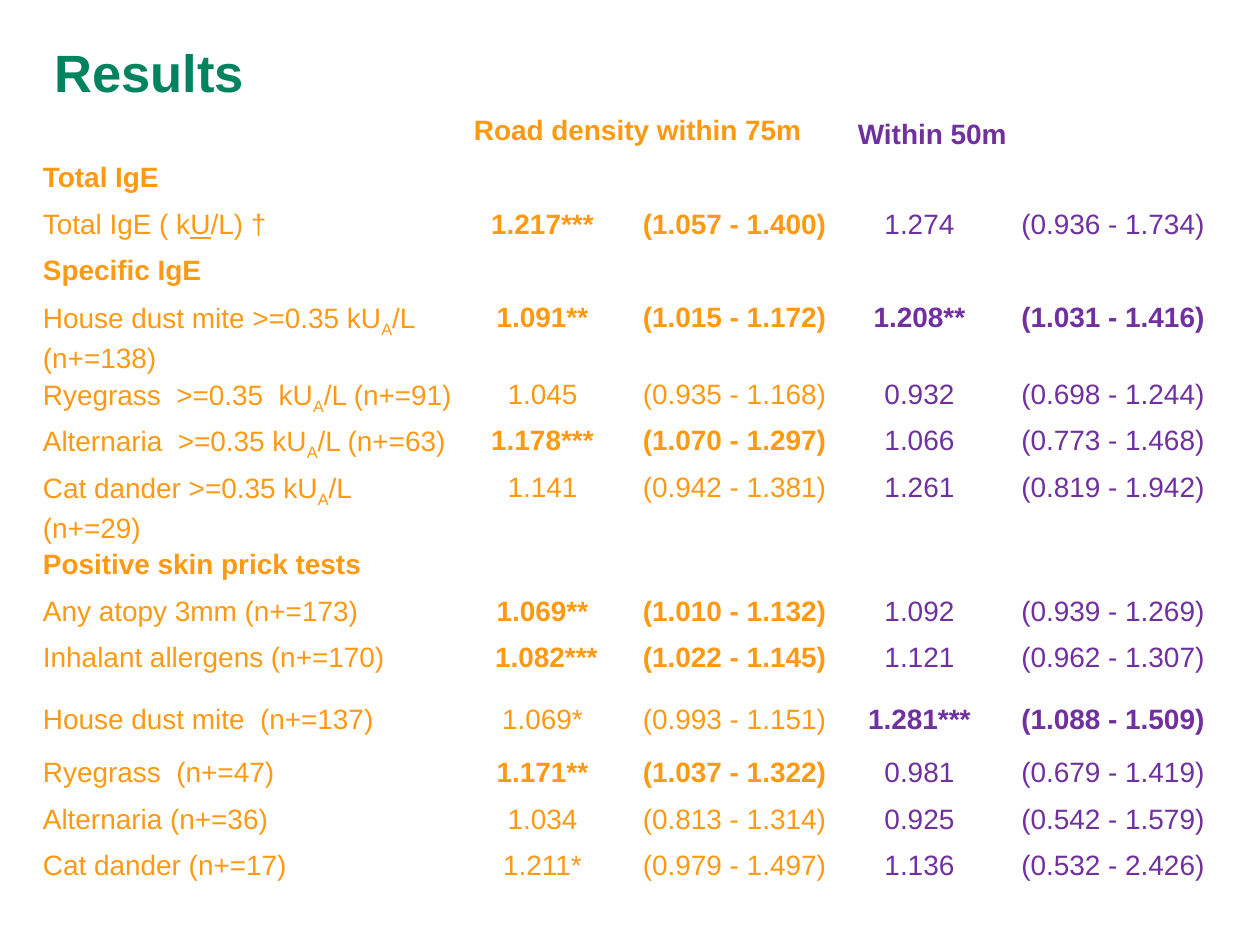
from dataclasses import dataclass
from typing import Any

import pptx
import pptx.dml.color
import pptx.enum.text
import pptx.util

SCALE = 914400 // 126
ALIGN = pptx.enum.text.PP_ALIGN


@dataclass(frozen=True)
class Theme:
    font: str = "Arial"
    title: str = "01835F"
    near: str = "FE9914"
    far: str = "7030A0"
    head_size: int = 30
    size: int = 16
    line: float = 1.15


@dataclass(frozen=True)
class Row:
    """One result line; underscores in the label fence a marked letter."""
    high: int
    label: str
    values: tuple[str, ...] = ()


THEME = Theme()
COLS = (431, 155, 229, 141, 246, 24)
HEAD = 43
ROWS = (
    Row(47, "Total IgE"),
    Row(46, "Total IgE ( k_U_/L) †",
        ("1.217***", "(1.057 - 1.400)", "1.274", "(0.936 - 1.734)")),
    Row(47, "Specific IgE"),
    Row(76, "House dust mite >=0.35 kU_A_/L (n+=138)",
        ("1.091**", "(1.015 - 1.172)", "1.208**", "(1.031 - 1.416)")),
    Row(46, "Ryegrass  >=0.35  kU_A_/L (n+=91)",
        ("1.045", "(0.935 - 1.168)", "0.932", "(0.698 - 1.244)")),
    Row(47, "Alternaria  >=0.35 kU_A_/L (n+=63)",
        ("1.178***", "(1.070 - 1.297)", "1.066", "(0.773 - 1.468)")),
    Row(74, "Cat dander >=0.35 kU_A_/L  (n+=29)",
        ("1.141", "(0.942 - 1.381)", "1.261", "(0.819 - 1.942)")),
    Row(47, "Positive skin prick tests"),
    Row(46, "Any atopy 3mm (n+=173)",
        ("1.069**", "(1.010 - 1.132)", "1.092", "(0.939 - 1.269)")),
    Row(62, "Inhalant allergens (n+=170)",
        (" 1.082***", "(1.022 - 1.145)", "1.121", "(0.962 - 1.307)")),
    Row(53, "House dust mite  (n+=137)",
        ("1.069*", "(0.993 - 1.151)", "1.281***", "(1.088 - 1.509)")),
    Row(47, "Ryegrass  (n+=47)",
        ("1.171**", "(1.037 - 1.322)", "0.981", "(0.679 - 1.419)")),
    Row(46, "Alternaria (n+=36)",
        ("1.034", "(0.813 - 1.314)", "0.925", "(0.542 - 1.579)")),
    Row(47, "Cat dander (n+=17)",
        ("1.211*", "(0.979 - 1.497)", "1.136", "(0.532 - 2.426)")),
)


def px(count: int) -> pptx.util.Emu:
    return pptx.util.Emu(count * SCALE)


def style(font: Any, size: int, color: str, bold: bool) -> None:
    font.name = THEME.font
    font.size = pptx.util.Pt(size)
    font.bold = bold
    font.color.rgb = pptx.dml.color.RGBColor.from_string(color)


def write(cell: Any, text: str, color: str, bold: bool,
          align: ALIGN = ALIGN.LEFT, line: float = THEME.line) -> None:
    """Fill a cell, underlining a fenced U and lowering a fenced A."""
    para = cell.text_frame.paragraphs[0]
    para.alignment = align
    para.line_spacing = line
    style(para.font, THEME.size, color, bold)
    for spot, part in enumerate(text.split("_")):
        run = para.add_run()
        run.text = part
        if spot % 2 and part == "U":
            run.font.underline = True
        elif spot % 2:
            run.font._element.set("baseline", "-25000")


def add_title(slide: Any) -> None:
    title = slide.shapes.title
    title.left, title.top = px(42), px(-4)
    title.width, title.height = px(1134), px(151)
    frame = title.text_frame
    frame.text = "Results"
    frame.vertical_anchor = pptx.enum.text.MSO_ANCHOR.MIDDLE
    para = frame.paragraphs[0]
    para.alignment = ALIGN.LEFT
    style(para.font, THEME.head_size, THEME.title, True)


def fill_row(grid: Any, index: int, row: Row) -> None:
    write(grid.cell(index, 0), row.label, THEME.near, not row.values)
    for col, value in enumerate(row.values, 1):
        ratio = row.values[(col - 1) // 2 * 2]
        color = THEME.near if col < 3 else THEME.far
        write(grid.cell(index, col), value, color, "**" in ratio, ALIGN.CENTER)


def add_grid(slide: Any) -> None:
    highs = [HEAD] + [row.high for row in ROWS]
    grid = slide.shapes.add_table(
        len(highs), len(COLS), px(34), px(115), px(sum(COLS)), px(sum(highs))
    ).table
    grid.first_row = grid.horz_banding = False
    for col, wide in zip(grid.columns, COLS):
        col.width = px(wide)
    for line, high in zip(grid.rows, highs):
        line.height = px(high)
    for cell in grid.iter_cells():
        cell.fill.background()
        cell.margin_left = cell.margin_right = px(9)
        cell.margin_top = cell.margin_bottom = 0

    tests = 1 + [row.label for row in ROWS].index("Positive skin prick tests")
    for line, first, last in ((0, 1, 2), (0, 3, 5), (tests, 0, 1), (tests, 3, 5)):
        grid.cell(line, first).merge(grid.cell(line, last))
    write(grid.cell(0, 1), "Road density within 75m", THEME.near, True, line=1.0)
    write(grid.cell(0, 3), "Within 50m", THEME.far, True)
    for index, row in enumerate(ROWS, 1):
        fill_row(grid, index, row)


def main() -> None:
    deck = pptx.Presentation()
    deck.slide_width, deck.slide_height = px(1260), px(945)
    slide = deck.slides.add_slide(deck.slide_layouts[5])
    add_grid(slide)
    add_title(slide)
    deck.save("out.pptx")


if __name__ == "__main__":
    main()
